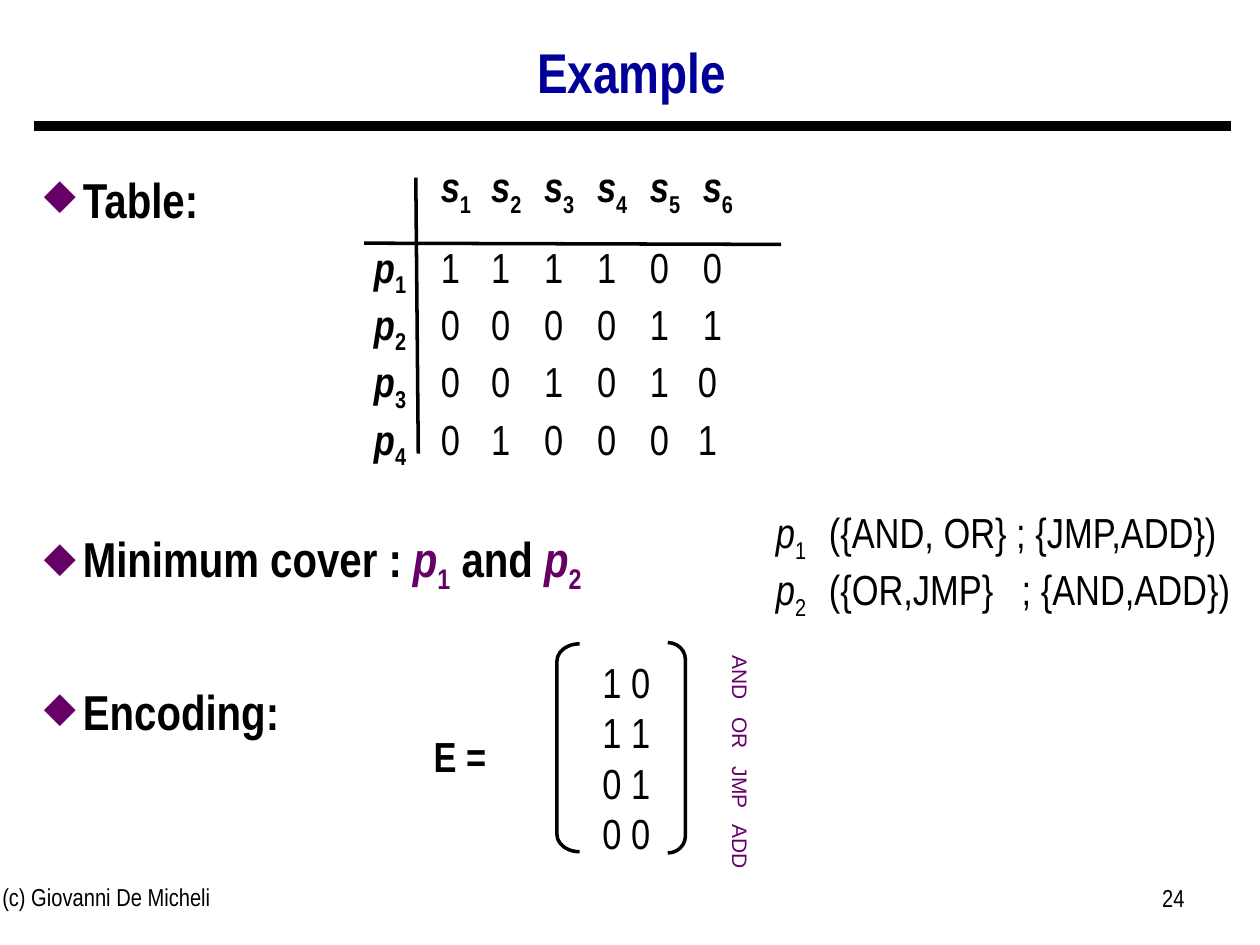
from dataclasses import dataclass, replace
from typing import NamedTuple, Sequence

from lxml import etree
from pptx import Presentation
from pptx import util as u
from pptx.dml.color import RGBColor
from pptx.enum import shapes, text
from pptx.oxml import ns


@dataclass(frozen=True)
class Theme:
    ink: str = "000000"
    blue: str = "000099"
    plum: str = "660066"
    font: str = "Arial Narrow"
    sans: str = "Arial"
    title: int = 32
    body: int = 28
    math: int = 24
    foot: int = 14
    tag: int = 12


T = Theme()


@dataclass(frozen=True)
class Look:
    size: int
    color: str = T.ink
    bold: bool = False
    ital: bool = False
    sub: bool = False
    font: str = T.font


class Bit(NamedTuple):
    text: str
    look: Look


class Box(NamedTuple):
    left: float
    top: float
    width: float
    height: float


class Line(NamedTuple):
    start: tuple[float, float]
    end: tuple[float, float]
    width: int


BODY = Look(T.body, bold=True)
MATH = Look(T.math)
BOLD = Look(T.math, bold=True)

RULES = (
    Line((0.27, 1), (9.77, 1), 6),
    Line((3.3, 1.41), (3.32, 3.6), 2),
    Line((2.89, 1.93), (6.2, 1.94), 2),
)
BRACKETS = (
    (shapes.MSO_SHAPE.LEFT_BRACKET, Box(4.42, 5.11, 0.18, 1.65), 0.76),
    (shapes.MSO_SHAPE.RIGHT_BRACKET, Box(5.3, 5.1, 0.14, 1.67), 0.96),
)
STOPS = (0.53, 0.93, 1.35, 1.77, 2.19)
WIDE, NEAR = 2.61, 2.57  # last column's tab stop
ROWS = (("111100", WIDE), ("000011", WIDE), ("001010", NEAR), ("010001", NEAR))
CODES = ("1 0", "1 1", "0 1", "0 0")


def var(name: str, num: int, look: Look) -> list[Bit]:
    """An italic letter with an upright subscript."""
    return [Bit(name, replace(look, ital=True)),
            Bit(str(num), replace(look, sub=True))]


def style(run, look: Look) -> None:
    font = run.font
    font.name, font.size = look.font, u.Pt(look.size)
    font.bold, font.italic = look.bold, look.ital
    font.color.rgb = RGBColor.from_string(look.color)
    if look.sub:
        run._r.get_or_add_rPr().set("baseline", "-25000")


def fill(par, bits: Sequence[Bit], align=text.PP_ALIGN.LEFT) -> None:
    par.alignment = align
    for bit in bits:
        run = par.add_run()
        run.text = bit.text
        style(run, bit.look)


def child(parent, tag: str, **attrs: str):
    return etree.SubElement(parent, ns.qn(tag), attrs)


def tabs(par, stops: Sequence[float]) -> None:
    group = child(par._p.get_or_add_pPr(), "a:tabLst")
    for stop in stops:
        child(group, "a:tab", pos=str(u.Inches(stop)), algn="l")


def bullet(par) -> None:
    props = par._p.get_or_add_pPr()
    props.set("marL", str(u.Inches(0.31)))
    props.set("indent", str(u.Inches(-0.31)))
    child(child(props, "a:buClr"), "a:srgbClr", val=T.plum)
    child(props, "a:buSzPct", val="85000")
    child(props, "a:buChar", char="◆")


def place(shape, box: Box) -> None:
    shape.left, shape.top, shape.width, shape.height = map(u.Inches, box)


def write(slide, box: Box, lines: Sequence[Sequence[Bit]],
          align=text.PP_ALIGN.LEFT, mid: bool = False, wrap: bool = True):
    """Add a text box with one paragraph for each line."""
    shape = slide.shapes.add_textbox(*map(u.Inches, box))
    frame = shape.text_frame
    frame.word_wrap = wrap
    if mid:
        frame.vertical_anchor = text.MSO_ANCHOR.MIDDLE
    for num, bits in enumerate(lines):
        par = frame.add_paragraph() if num else frame.paragraphs[0]
        fill(par, bits, align)
    return shape


def rule(slide, line: Line) -> None:
    ends = map(u.Inches, line.start + line.end)
    link = slide.shapes.add_connector(shapes.MSO_CONNECTOR.STRAIGHT, *ends)
    link.line.width = u.Pt(line.width)
    link.line.color.rgb = RGBColor.from_string(T.ink)
    child(link._element.spPr, "a:effectLst")


def brace(slide, kind, box: Box, curve: float) -> None:
    shape = slide.shapes.add_shape(kind, *map(u.Inches, box))
    shape.shadow.inherit = False
    shape.adjustments[0] = curve
    shape.fill.background()
    shape.line.width = u.Pt(2)
    shape.line.color.rgb = RGBColor.from_string(T.ink)


def head(slide) -> None:
    title = slide.shapes.title
    place(title, Box(0.26, 0.22, 9.51, 0.75))
    title.text_frame.text = "Example"
    title.text_frame.vertical_anchor = text.MSO_ANCHOR.MIDDLE
    par = title.text_frame.paragraphs[0]
    par.alignment, par.line_spacing = text.PP_ALIGN.CENTER, 0.9
    style(par.runs[0], Look(T.title, T.blue, bold=True))


def points(slide) -> None:
    plum = replace(BODY, color=T.plum)
    cover = [Bit("Minimum cover : ", BODY), *var("p", 1, plum),
             Bit(" and ", BODY), *var("p", 2, plum)]
    lines = ([Bit("Table:", BODY)], cover, [Bit("Encoding:", BODY)])
    shape = write(slide, Box(0.25, 1.18, 9.51, 5.69), lines)
    for par, gap in zip(shape.text_frame.paragraphs, (10, 162, 41)):
        bullet(par)
        par.line_spacing, par.space_before = 1.25, u.Pt(gap)


def primes(slide) -> None:
    """Prime rows against the seed columns, aligned on tab stops."""
    top = []
    for num in range(1, 7):
        top += [Bit("\t", BOLD), *var("s", num, BOLD)]
    lines = [top]
    for num, (row, _) in enumerate(ROWS, 1):
        cells = "".join("\t" + cell for cell in row)
        lines.append([*var("p", num, BOLD), Bit(cells, MATH)])
    shape = write(slide, Box(2.87, 1.4, 3.86, 2.21), lines, mid=True)
    pars = shape.text_frame.paragraphs
    for par, last in zip(pars, (WIDE, *(row[1] for row in ROWS))):
        tabs(par, (*STOPS, last))
    pars[1].space_before = u.Pt(13)


def pairs(slide) -> None:
    sets = ("\t({AND, OR} ; {JMP,ADD})", "\t({OR,JMP}\t; {AND,ADD})")
    lines = [[*var("p", num, MATH), Bit(item, MATH)]
             for num, item in enumerate(sets, 1)]
    shape = write(slide, Box(6.06, 4.02, 5.11, 0.91), lines, mid=True)
    for par in shape.text_frame.paragraphs:
        tabs(par, (0.42, 1.95))


def codes(slide) -> None:
    mid = text.PP_ALIGN.CENTER
    write(slide, Box(4.68, 5.16, 0.58, 1.7),
          [[Bit(code, MATH)] for code in CODES], mid, True, False)
    write(slide, Box(3.34, 5.75, 0.62, 0.5), [[Bit("E =", BOLD)]],
          mid, True, False)
    for item in BRACKETS:
        brace(slide, *item)
    look = Look(T.tag, T.plum, font=T.sans)
    tags = write(slide, Box(4.61, 5.66, 2.53, 0.3),
                 [[Bit("AND\tOR\tJMP\tADD", look)]])
    tags.rotation = 90
    tags.text_frame.margin_left = u.Inches(0.66)
    tabs(tags.text_frame.paragraphs[0], (0.49, 0.88, 1.34))


def main() -> None:
    deck = Presentation()
    deck.slide_width, deck.slide_height = u.Inches(10), u.Inches(7.5)
    slide = deck.slides.add_slide(deck.slide_layouts[5])
    head(slide)
    points(slide)
    for line in RULES:
        rule(slide, line)
    primes(slide)
    pairs(slide)
    codes(slide)
    foot = Look(T.foot)
    write(slide, Box(-0.08, 6.95, 3.17, 0.52),
          [[Bit("(c) Giovanni De Micheli", foot)]])
    write(slide, Box(7.17, 6.96, 2.33, 0.52), [[Bit("24", foot)]],
          text.PP_ALIGN.RIGHT)
    deck.save("out.pptx")


if __name__ == "__main__":
    main()
